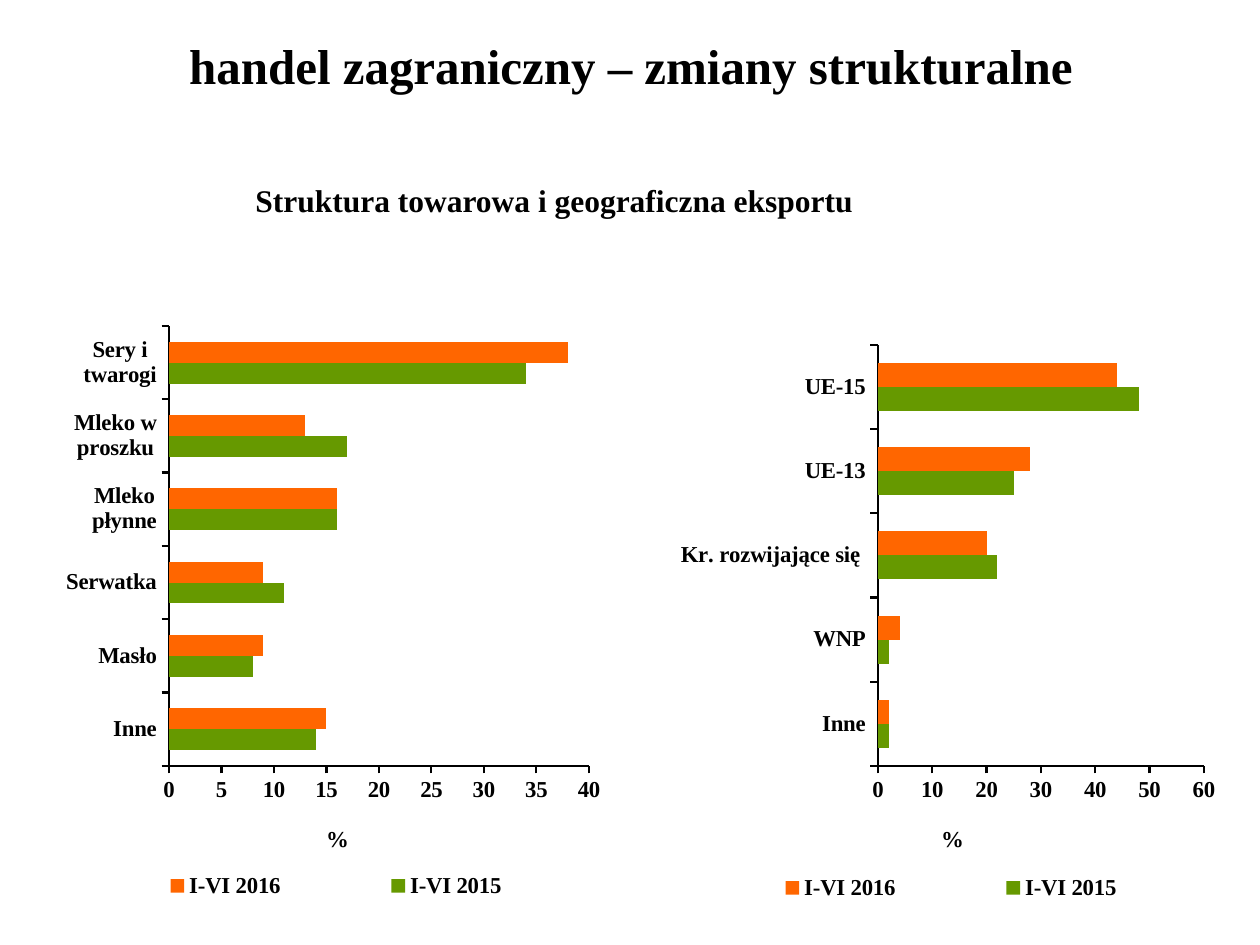
from dataclasses import dataclass

from pptx import Presentation
from pptx.chart.data import CategoryChartData
from pptx.dml.color import RGBColor
from pptx.enum.chart import XL_CHART_TYPE, XL_LEGEND_POSITION, XL_TICK_MARK
from pptx.enum.text import MSO_ANCHOR, PP_ALIGN
from pptx.oxml import parse_xml
from pptx.oxml.ns import nsdecls, qn
from pptx.util import Pt

EMU_PER_PX = 914400 / 126


@dataclass(frozen=True)
class Theme:
    font: str = "Times New Roman"
    ink: str = "000000"
    year_2015: str = "669900"
    year_2016: str = "FF6600"
    title: int = 28
    subtitle: int = 18
    chart: int = 13
    axis_line: float = 1.25


THEME = Theme()


def px(length):
    return round(length * EMU_PER_PX)


def style_font(font, size):
    font.name = THEME.font
    font.size = Pt(size)
    font.bold = True
    font.color.rgb = RGBColor.from_string(THEME.ink)


def add_text(slide, text, box, *, size, align=PP_ALIGN.LEFT, anchor=MSO_ANCHOR.TOP):
    frame = slide.shapes.add_textbox(*map(px, box)).text_frame
    frame.word_wrap = True
    frame.vertical_anchor = anchor
    paragraph = frame.paragraphs[0]
    paragraph.alignment = align
    run = paragraph.add_run()
    run.text = text
    style_font(run.font, size)


def place(part, index, frame, box, inner=False):
    """Fix a chart part at a slide position, as fractions of the chart frame."""
    left, top, width, height = frame
    fractions = {"x": (box[0] - left) / width, "y": (box[1] - top) / height}
    if len(box) == 4:
        fractions |= {"w": box[2] / width, "h": box[3] / height}
    target = '<c:layoutTarget val="inner"/>' if inner else ""
    modes = '<c:xMode val="edge"/><c:yMode val="edge"/>'
    values = "".join(f'<c:{key} val="{value:.4f}"/>' for key, value in fractions.items())
    for old in part.findall(qn("c:layout")):
        part.remove(old)
    part.insert(index, parse_xml(
        f'<c:layout {nsdecls("c")}><c:manualLayout>{target}{modes}{values}'
        "</c:manualLayout></c:layout>"))


def style_axis(axis):
    axis.has_major_gridlines = False
    axis.major_tick_mark = XL_TICK_MARK.OUTSIDE
    axis.minor_tick_mark = XL_TICK_MARK.NONE
    axis.format.line.width = Pt(THEME.axis_line)
    axis.format.line.color.rgb = RGBColor.from_string(THEME.ink)
    style_font(axis.tick_labels.font, THEME.chart)


def add_export_chart(slide, shares, *, frame, plot, unit_at, legend_at, top_value, step):
    # Shares by category, as (2015, 2016) pairs
    data = CategoryChartData(number_format="0")
    data.categories = list(shares)
    for name, values in zip(("I-VI 2015", "I-VI 2016"), zip(*shares.values())):
        data.add_series(name, values)
    chart = slide.shapes.add_chart(
        XL_CHART_TYPE.BAR_CLUSTERED, *map(px, frame), data).chart
    chart.has_title = False
    style_font(chart.font, THEME.chart)

    # Bars
    bars = chart.plots[0]
    bars.gap_width = 150
    bars.vary_by_categories = False
    for series, color in zip(bars.series, (THEME.year_2015, THEME.year_2016)):
        series.format.fill.solid()
        series.format.fill.fore_color.rgb = RGBColor.from_string(color)

    # Axes
    style_axis(chart.category_axis)
    percent = chart.value_axis
    style_axis(percent)
    percent.minimum_scale, percent.maximum_scale = 0, top_value
    percent.major_unit = step
    unit = percent.axis_title.text_frame.paragraphs[0].add_run()
    unit.text = "%"
    style_font(unit.font, THEME.chart)

    # Legend
    chart.has_legend = True
    chart.legend.position = XL_LEGEND_POSITION.BOTTOM
    chart.legend.include_in_layout = False
    style_font(chart.legend.font, THEME.chart)

    # Positions inside the frame
    space = chart._chartSpace
    place(space.find(".//" + qn("c:plotArea")), 0, frame, plot, inner=True)
    place(space.find(".//" + qn("c:valAx")).find(qn("c:title")), 1, frame, unit_at)
    place(space.find(".//" + qn("c:legend")), 1, frame, legend_at)


def main():
    deck = Presentation()
    deck.slide_width, deck.slide_height = px(1260), px(945)
    slide = deck.slides.add_slide(deck.slide_layouts[6])

    # Headings
    add_text(slide, "handel zagraniczny – zmiany strukturalne", (64, 35, 1134, 59),
             size=THEME.title, align=PP_ALIGN.CENTER, anchor=MSO_ANCHOR.MIDDLE)
    add_text(slide, "Struktura towarowa i geograficzna eksportu", (243, 175, 794, 50),
             size=THEME.subtitle)

    # Export by product
    products = {
        "Inne": (14, 15),
        "Masło": (8, 9),
        "Serwatka": (11, 9),
        "Mleko płynne": (16, 16),
        "Mleko w proszku": (17, 13),
        "Sery i twarogi": (34, 38),
    }
    add_export_chart(slide, products, frame=(54, 314, 557, 605),
                     plot=(169, 326, 420, 440), unit_at=(322, 821),
                     legend_at=(67, 866, 538, 40), top_value=40, step=5)

    # Export by destination
    destinations = {
        "Inne": (2, 2),
        "WNP": (2, 4),
        "Kr. rozwijające się ": (22, 20),
        "UE-13": (25, 28),
        "UE-15": (48, 44),
    }
    add_export_chart(slide, destinations, frame=(669, 334, 557, 586),
                     plot=(878, 345, 326, 421), unit_at=(937, 821),
                     legend_at=(682, 868, 538, 40), top_value=60, step=10)

    deck.save("out.pptx")


if __name__ == "__main__":
    main()
